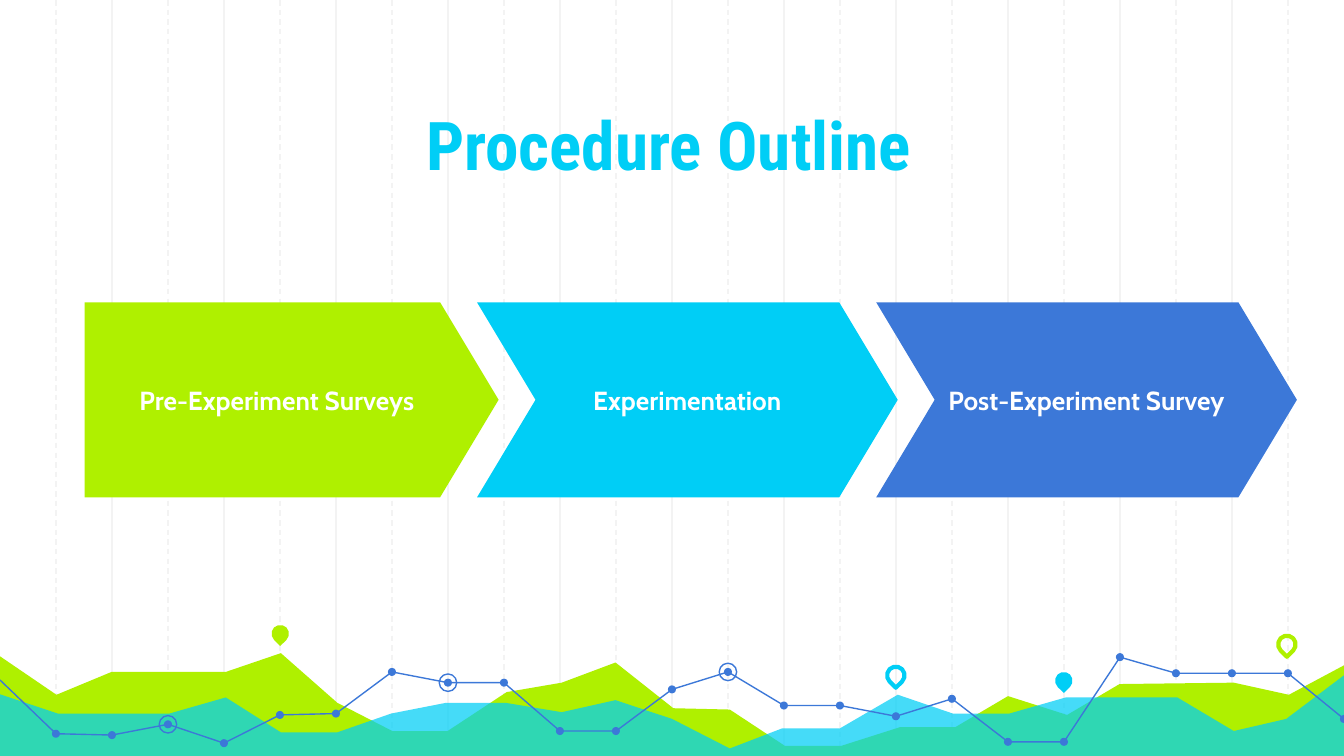
import dataclasses

import lxml.etree
import pptx
import pptx.dml.color
import pptx.enum.dml
import pptx.enum.shapes
import pptx.enum.text
import pptx.oxml.ns
import pptx.util

Inches = pptx.util.Inches
SHAPES = pptx.enum.shapes.MSO_SHAPE


@dataclasses.dataclass(frozen=True)
class Theme:
    """Colours, fonts and type sizes of the slide."""
    lime: str = "AFF000"
    cyan: str = "00CEF6"
    blue: str = "3C78D8"
    grid: str = "F3F3F3"
    white: str = "FFFFFF"
    title_font: str = "Roboto Condensed"
    body_font: str = "Cabin"
    title_size: int = 36
    body_size: int = 14
    thin: float = 0.75
    thick: float = 2.25


THEME = Theme()
COLUMNS = 24
LIME_AREA = [
    (-0.02, 4.87), (0.42, 5.17), (0.83, 5), (1.68, 5), (2.09, 4.86), (2.51, 5.23),
    (2.92, 5.44), (3.33, 5.44), (3.77, 5.15), (4.18, 5.08), (4.58, 4.93), (5.01, 5.27),
    (5.43, 5.28), (5.84, 5.55), (6.26, 5.55), (6.7, 5.41), (7.11, 5.41), (7.5, 5.18),
    (7.94, 5.32), (8.33, 5.09), (9.18, 5.08), (9.59, 5.17), (10.02, 4.94),
    (10.01, 5.64), (-0.03, 5.64)]
CYAN_AREA = [
    (-0.02, 5.16), (0.43, 5.31), (1.26, 5.31), (1.68, 5.19), (2.09, 5.45), (2.51, 5.45),
    (2.91, 5.31), (3.32, 5.23), (3.76, 5.23), (4.18, 5.3), (4.58, 5.21), (5, 5.35),
    (5.43, 5.57), (5.82, 5.42), (6.25, 5.42), (6.68, 5.17), (7.09, 5.31), (7.51, 5.31),
    (7.93, 5.19), (8.76, 5.19), (9.18, 5.44), (9.57, 5.35), (10.02, 5.01),
    (10.02, 5.65), (-0.03, 5.65)]
TREND = [
    5.06, 5.46, 5.47, 5.39, 5.53, 5.32, 5.31, 5, 5.08, 5.08, 5.44, 5.44, 5.13,
    5, 5.25, 5.25, 5.33, 5.2, 5.52, 5.52, 4.89, 5.01, 5.01, 5.01, 5.35]
TREND_BREAKS = [0, 11, 20, 24]
RINGED = [3, 8, 13]
PINS = [(2.02, 4.65, THEME.lime, True), (6.6, 4.96, THEME.cyan, False),
        (7.85, 5, THEME.cyan, True), (9.51, 4.73, THEME.lime, False)]
STEPS = [("Pre-Experiment Surveys", SHAPES.PENTAGON, THEME.lime),
         ("Experimentation", SHAPES.CHEVRON, THEME.cyan),
         ("Post-Experiment Survey", SHAPES.CHEVRON, THEME.blue)]


def rgb(value):
    """Turn a hex string into a colour."""
    return pptx.dml.color.RGBColor.from_string(value)


def paint(shape, fill=None, line=None, weight=THEME.thin):
    """Give a shape a flat fill and outline, or none."""
    shape.shadow.inherit = False
    if fill:
        shape.fill.solid()
        shape.fill.fore_color.rgb = rgb(fill)
    else:
        shape.fill.background()
    if line:
        shape.line.color.rgb = rgb(line)
        shape.line.width = pptx.util.Pt(weight)
    else:
        shape.line.fill.background()


def add_preset(page, kind, box, **style):
    """Add a painted preset shape in a box given in inches."""
    shape = page.shapes.add_shape(kind, *map(Inches, box))
    paint(shape, **style)
    return shape


def add_outline(page, points, closed, **style):
    """Add a painted freeform through points given in inches."""
    corners = [(Inches(x), Inches(y)) for x, y in points]
    builder = page.shapes.build_freeform(*corners[0])
    builder.add_line_segments(corners[1:], close=closed)
    shape = builder.convert_to_shape()
    paint(shape, **style)
    return shape


def write(shape, text, font, size, color, anchor):
    """Write one centred bold run in a shape."""
    frame = shape.text_frame
    frame.word_wrap = True
    frame.auto_size = pptx.enum.text.MSO_AUTO_SIZE.NONE
    frame.vertical_anchor = anchor
    frame.margin_left = frame.margin_right = Inches(0.1)
    frame.margin_top = frame.margin_bottom = Inches(0.1)
    para = frame.paragraphs[0]
    para.alignment = pptx.enum.text.PP_ALIGN.CENTER
    span = para.add_run()
    span.text = text
    span.font.name = font
    span.font.size = pptx.util.Pt(size)
    span.font.bold = True
    span.font.color.rgb = rgb(color)


def add_grid(page, left, top, width, height):
    """Draw vertical rules, alternately dashed and solid."""
    for column in range(1, COLUMNS):
        x = Inches(left + width * column / COLUMNS)
        rule = page.shapes.add_connector(
            pptx.enum.shapes.MSO_CONNECTOR.STRAIGHT, x, Inches(top), x, Inches(top + height))
        rule.line.color.rgb = rgb(THEME.grid)
        rule.line.width = pptx.util.Pt(THEME.thin)
        if column % 2:
            rule.line.dash_style = pptx.enum.dml.MSO_LINE.DASH
        lxml.etree.SubElement(rule._element.spPr, pptx.oxml.ns.qn("a:effectLst"))


def add_landscape(page, left, top, width):
    """Draw the two areas, the pins and the dotted trend line."""
    def shift(points):
        return [(left + x, top + y) for x, y in points]

    def add_circle(center, size, **style):
        x, y = center
        add_preset(page, SHAPES.OVAL, (x - size / 2, y - size / 2, size, size), **style)

    add_outline(page, shift(LIME_AREA), True, fill=THEME.lime)
    area = add_outline(page, shift(CYAN_AREA), True, fill=THEME.cyan)
    color = area._element.spPr.find(".//" + pptx.oxml.ns.qn("a:srgbClr"))
    lxml.etree.SubElement(color, pptx.oxml.ns.qn("a:alpha"), val="73000")

    for x, y, tint, filled in PINS:
        style = {"fill": tint} if filled else {"line": tint, "weight": THEME.thick}
        pin = add_preset(page, SHAPES.TEAR, (left + x, top + y, 0.13, 0.13), **style)
        pin.rotation = 135

    points = shift((width * column / COLUMNS, y) for column, y in enumerate(TREND))
    for start, end in zip(TREND_BREAKS, TREND_BREAKS[1:]):
        add_outline(page, points[start:end + 1], False, line=THEME.blue)
    for point in points[1:]:
        add_circle(point, 0.06, fill=THEME.blue)
    for column in RINGED:
        add_circle(points[column], 0.13, line=THEME.blue)


def add_title(page, left, top, width, height):
    """Place the title in front of the background."""
    title = page.shapes.title
    title._element.getparent().append(title._element)
    title.left, title.top = Inches(left), Inches(top)
    title.width, title.height = Inches(width), Inches(height)
    write(title, "Procedure Outline", THEME.title_font, THEME.title_size,
          THEME.cyan, pptx.enum.text.MSO_ANCHOR.BOTTOM)


def add_steps(page, left, top, width, height):
    """Draw the procedure as a row of interlocking arrows."""
    pitch, arrow_width, lead = 2.97, 3.13, 0.05
    for index, (text, kind, tint) in enumerate(STEPS):
        x = left + width - arrow_width - pitch * (len(STEPS) - 1 - index)
        inset = 0 if index else lead
        step = add_preset(page, kind, (x + inset, top, arrow_width - inset, height), fill=tint)
        step.adjustments[0] = 0.3
        write(step, text, THEME.body_font, THEME.body_size,
              THEME.white, pptx.enum.text.MSO_ANCHOR.MIDDLE)


def main():
    """Build the procedure slide and save it."""
    deck = pptx.Presentation()
    deck.slide_width = Inches(10)
    deck.slide_height = deck.slide_width * 9 // 16
    page = deck.slides.add_slide(deck.slide_layouts.get_by_name("Title Only"))
    page.background.fill.solid()
    page.background.fill.fore_color.rgb = rgb(THEME.white)
    add_grid(page, 0, 0, 10, 5.65)
    add_landscape(page, 0, 0, 10)
    add_title(page, 1.15, 0.69, 7.65, 0.78)
    add_steps(page, 0.63, 2.25, 9.02, 1.45)
    deck.save("out.pptx")


if __name__ == "__main__":
    main()
